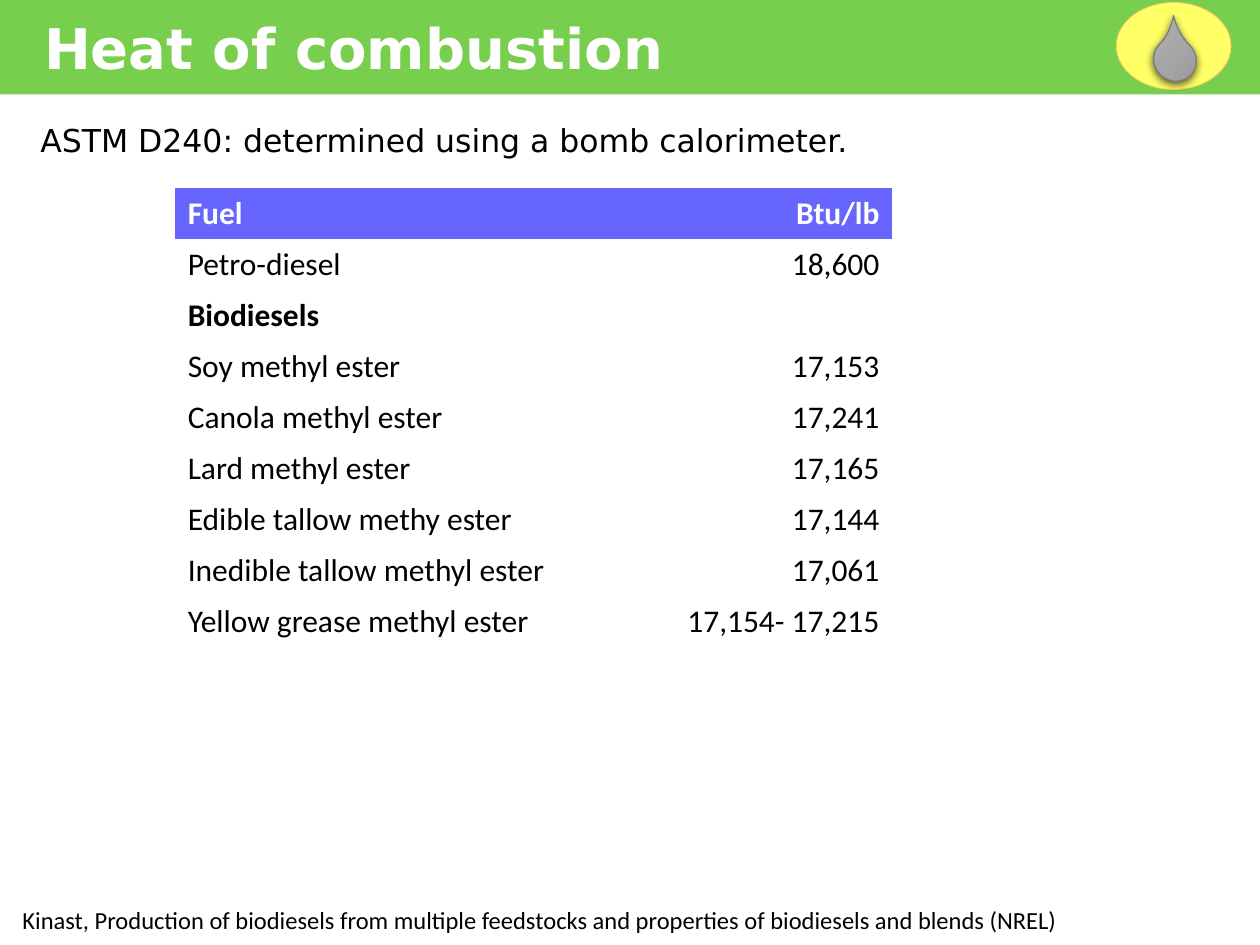
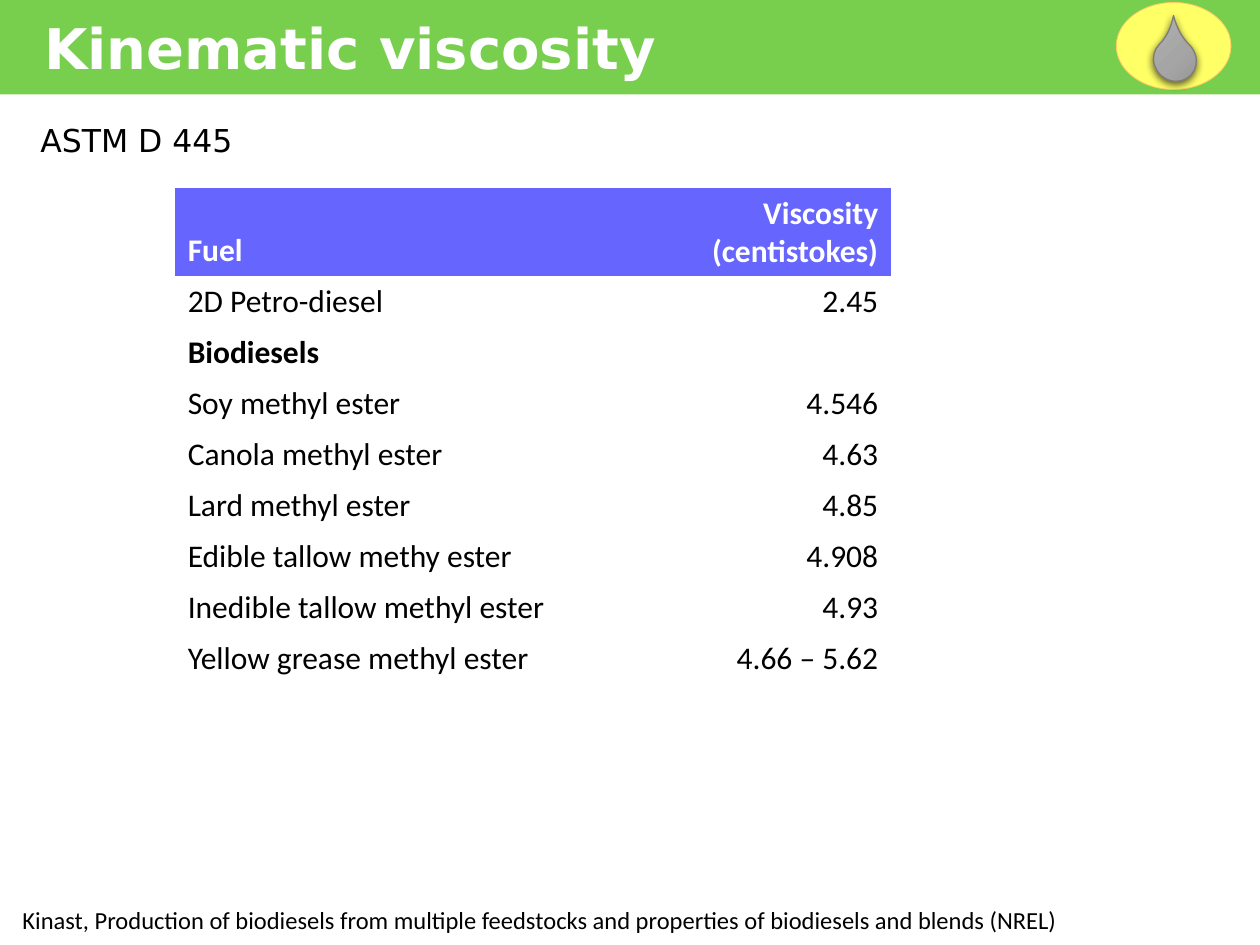
from copy import deepcopy
from dataclasses import dataclass

from lxml import etree
from pptx import Presentation
from pptx.dml.color import RGBColor
from pptx.enum.shapes import MSO_SHAPE
from pptx.enum.text import MSO_ANCHOR, MSO_AUTO_SIZE, PP_ALIGN
from pptx.oxml import parse_xml
from pptx.oxml.ns import nsdecls, qn
from pptx.util import Emu, Pt

RECTANGLE, OVAL, TEAR = MSO_SHAPE.RECTANGLE, MSO_SHAPE.OVAL, MSO_SHAPE.TEAR
LEFT, RIGHT = PP_ALIGN.LEFT, PP_ALIGN.RIGHT
TOP, MIDDLE, BOTTOM = MSO_ANCHOR.TOP, MSO_ANCHOR.MIDDLE, MSO_ANCHOR.BOTTOM
NO_AUTOFIT = MSO_AUTO_SIZE.NONE

PX_PER_INCH = 200
TITLE_AND_CONTENT = 1
PLAIN_TABLE_STYLE = "{2D5ABB26-0587-4C30-8999-92F81FD0307C}"
DROP_SHADOW = (
    f'<a:outerShdw {nsdecls("a")} blurRad="57150" dist="19050" dir="5400000" '
    'algn="ctr" rotWithShape="0"><a:srgbClr val="000000">'
    '<a:alpha val="63000"/></a:srgbClr></a:outerShdw>'
)


@dataclass(frozen=True)
class Theme:
    heading_font: str = "DejaVu Sans"
    table_font: str = "Calibri"
    band: str = "78CE4D"
    header: str = "6666FF"
    light: str = "FFFFFF"
    dark: str = "000000"
    badge: str = "FFFF66"
    badge_edge: str = "FFCC66"
    drop_shades: tuple = ("AFAFAF", "A5A5A5", "939393")
    drop_edge: str = "7C7C7C"
    title_size: int = 32
    body_size: int = 18
    source_size: int = 14


def px(length):
    return Emu(length * 914400 // PX_PER_INCH)


def rgb(value):
    return RGBColor.from_string(value)


class FuelDeck:
    def __init__(self, theme):
        self.theme = theme
        self.deck = Presentation()
        self.deck.slide_width, self.deck.slide_height = px(2000), px(1500)
        self.page = None

    def add_page(self):
        layout = self.deck.slide_layouts[TITLE_AND_CONTENT]
        self.page = self.deck.slides.add_slide(layout)

    def place(self, shape, left, top, width, height):
        shape.left, shape.top = px(left), px(top)
        shape.width, shape.height = px(width), px(height)

    def set_text(self, frame, text, font, size, color, bold=False, align=LEFT):
        frame.text = text
        para = frame.paragraphs[0]
        para.alignment = align
        para.font.name, para.font.size = font, Pt(size)
        para.font.bold = bold
        para.font.color.rgb = rgb(color)
        return para

    def shape(self, shapes, kind, box, fill=None, edge=None, weight=0):
        item = shapes.add_shape(kind, *map(px, box))
        item.shadow.inherit = False
        if fill:
            item.fill.solid()
            item.fill.fore_color.rgb = rgb(fill)
        if edge:
            item.line.color.rgb = rgb(edge)
            item.line.width = Pt(weight)
        else:
            item.line.fill.background()
        return item

    def title(self, text):
        theme = self.theme
        title = self.page.shapes.title
        band = self.shape(self.page.shapes, RECTANGLE, (0, 0, 2002, 150), theme.band)
        title.element.addprevious(band.element)
        self.place(title, 50, 10, 1600, 128)
        frame = title.text_frame
        frame.auto_size, frame.vertical_anchor = NO_AUTOFIT, MIDDLE
        self.set_text(frame, text, theme.heading_font, theme.title_size, theme.light, True)

    def badge(self):
        theme = self.theme
        group = self.page.shapes.add_group_shape()
        self.shape(group.shapes, OVAL, (1772, 4, 182, 138),
                   theme.badge, theme.badge_edge, 0.5)
        drop = self.shape(group.shapes, TEAR, (1832, 60, 66, 70),
                          edge=theme.drop_edge, weight=0.75)
        drop.adjustments[0] = 1.465
        drop.rotation = 314.8
        drop.fill.gradient()
        drop.fill.gradient_angle = 270
        stops = drop.element.find(".//" + qn("a:gsLst"))
        stops.insert(1, deepcopy(stops[0]))
        for index, shade in enumerate(theme.drop_shades):
            stop = drop.fill.gradient_stops[index]
            stop.position = index / 2
            stop.color.rgb = rgb(shade)
        drop.element.find(".//" + qn("a:effectLst")).append(parse_xml(DROP_SHADOW))

    def method(self, text):
        theme = self.theme
        body = self.page.placeholders[1]
        self.place(body, 44, 170, 1868, 86)
        frame = body.text_frame
        frame.auto_size, frame.vertical_anchor = NO_AUTOFIT, TOP
        para = self.set_text(frame, text, theme.heading_font, theme.body_size, theme.dark)
        para.line_spacing, para.space_before = 1.2, Pt(0)
        properties = body.element.find(".//" + qn("a:pPr"))
        properties.set("marL", "0")
        properties.set("indent", "0")
        bullet = etree.Element(qn("a:buNone"))
        properties.find(qn("a:defRPr")).addprevious(bullet)

    def source(self, text):
        theme = self.theme
        box = self.page.shapes.add_textbox(*map(px, (16, 1426, 1688, 68)))
        box.text_frame.word_wrap = False
        self.set_text(box.text_frame, text, theme.table_font, theme.source_size, theme.dark)

    def table(self, rows, value_width, header_height):
        theme = self.theme
        widths = (772, value_width)
        heights = [header_height] + [81] * (len(rows) - 1)
        holder = self.page.shapes.add_table(
            len(rows), len(widths), px(278), px(298), px(sum(widths)), px(sum(heights)))
        table = holder.table
        table.first_row = table.horz_banding = False
        holder.element.find(".//" + qn("a:tableStyleId")).text = PLAIN_TABLE_STYLE
        for column, width in zip(table.columns, widths):
            column.width = px(width)
        for row_index, values in enumerate(rows):
            table.rows[row_index].height = px(heights[row_index])
            is_header = row_index == 0
            for column_index, text in enumerate(values):
                cell = table.cell(row_index, column_index)
                cell.vertical_anchor = BOTTOM if is_header else TOP
                if is_header:
                    cell.fill.solid()
                    cell.fill.fore_color.rgb = rgb(theme.header)
                else:
                    cell.fill.background()
                self.set_text(cell.text_frame, text, theme.table_font, theme.body_size,
                              theme.light if is_header else theme.dark,
                              is_header or not values[1],
                              RIGHT if column_index else LEFT)


ESTERS = (
    "Soy methyl ester",
    "Canola methyl ester",
    "Lard methyl ester",
    "Edible tallow methy ester",
    "Inedible tallow methyl ester",
    "Yellow grease methyl ester",
)
SOURCE = ("Kinast, Production of biodiesels from multiple feedstocks "
          "and properties of biodiesels and blends (NREL)")
PROPERTIES = (
    dict(
        title="Heat of combustion",
        method="ASTM D240: determined using a bomb calorimeter.",
        unit="Btu/lb",
        diesel=("Petro-diesel", "18,600"),
        values=("17,153", "17,241", "17,165", "17,144", "17,061", "17,154- 17,215"),
        value_width=366,
        header_height=81,
    ),
    dict(
        title="Kinematic viscosity",
        method="ASTM D 445",
        unit="Viscosity (centistokes)",
        diesel=("2D Petro-diesel", "2.45"),
        values=("4.546", "4.63", "4.85", "4.908", "4.93", "4.66 – 5.62"),
        value_width=364,
        header_height=139,
    ),
)


def main():
    fuels = FuelDeck(Theme())
    for item in PROPERTIES:
        fuels.add_page()
        fuels.title(item["title"])
        fuels.badge()
        fuels.source(SOURCE)
        rows = [("Fuel", item["unit"]), item["diesel"], ("Biodiesels", "")]
        rows += zip(ESTERS, item["values"])
        fuels.table(rows, item["value_width"], item["header_height"])
        fuels.method(item["method"])
    fuels.deck.save("out.pptx")


if __name__ == "__main__":
    main()
